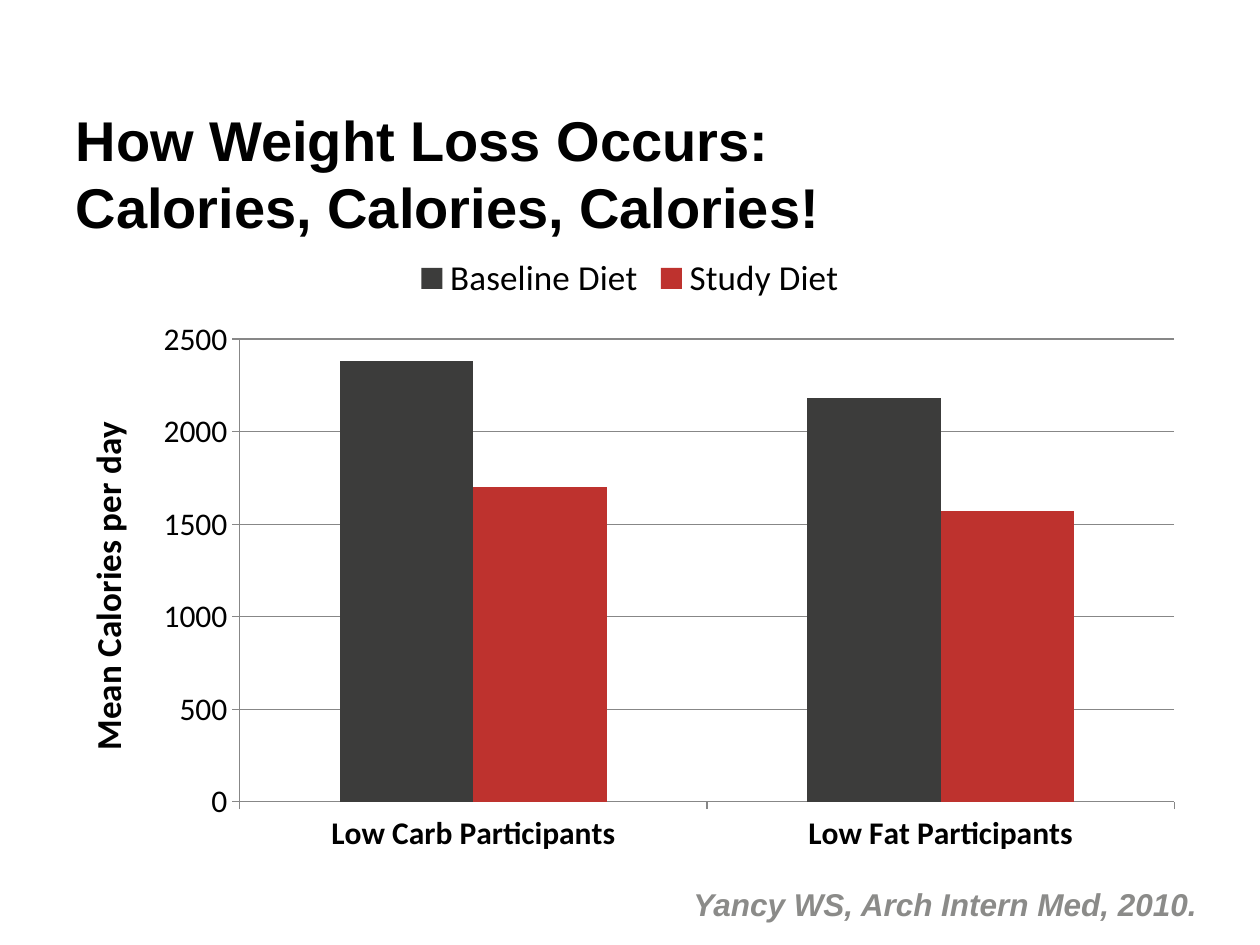
import dataclasses
import typing

import lxml.etree
import pptx
import pptx.chart.data
import pptx.dml.color
import pptx.enum.chart
import pptx.enum.text
import pptx.oxml
import pptx.oxml.ns
import pptx.util

Inches = pptx.util.Inches
Pt = pptx.util.Pt
COLORS = {
    "text": "000000",
    "baseline": "3C3C3B",
    "study": "BE322E",
    "line": "878787",
    "citation": "8B8B89",
}


@dataclasses.dataclass
class Series:
    name: str
    values: tuple[int, ...]
    color: str


CATEGORIES = ("Low Carb Participants", "Low Fat Participants")
SERIES = (
    Series("Baseline Diet", (2380, 2180), "baseline"),
    Series("Study Diet", (1700, 1570), "study"),
)
PLOT_LAYOUT = {"x": 0.156, "y": 0.158, "w": 0.824, "h": 0.742}


def rgb(color: str) -> pptx.dml.color.RGBColor:
    return pptx.dml.color.RGBColor.from_string(COLORS[color])


def set_attrs(obj: typing.Any, **values: typing.Any) -> None:
    for name, value in values.items():
        setattr(obj, name, value)


def set_font(font: typing.Any, size: int, color: str = "text", **values: typing.Any) -> None:
    set_attrs(font, size=Pt(size), **values)
    font.color.rgb = rgb(color)


def place(sp: typing.Any, left: float, top: float, width: float, height: float) -> None:
    set_attrs(sp, left=Inches(left), top=Inches(top),
              width=Inches(width), height=Inches(height))


def set_plot_layout(chart: typing.Any) -> None:
    plot_area = chart._chartSpace.chart.plotArea
    for old in plot_area.findall(pptx.oxml.ns.qn("c:layout")):
        plot_area.remove(old)
    layout = lxml.etree.Element(pptx.oxml.ns.qn("c:layout"))
    manual = lxml.etree.SubElement(layout, pptx.oxml.ns.qn("c:manualLayout"))
    settings = {"layoutTarget": "inner", "xMode": "edge", "yMode": "edge", **PLOT_LAYOUT}
    for tag, value in settings.items():
        lxml.etree.SubElement(manual, pptx.oxml.ns.qn(f"c:{tag}")).set("val", str(value))
    plot_area.insert(0, layout)


def add_title(slide: typing.Any) -> None:
    sp = slide.shapes.title
    place(sp, 0.5, 0.76, 9, 1.22)
    tf = sp.text_frame
    set_attrs(tf, word_wrap=True, vertical_anchor=pptx.enum.text.MSO_ANCHOR.MIDDLE)
    p = tf.paragraphs[0]
    p.text = "How Weight Loss Occurs:\vCalories, Calories, Calories!"
    p.alignment = pptx.enum.text.PP_ALIGN.LEFT
    for r in p.runs:
        set_font(r.font, 32, name="Arial", bold=True)


def add_calorie_chart(slide: typing.Any) -> None:
    data = pptx.chart.data.CategoryChartData()
    data.categories = CATEGORIES
    for s in SERIES:
        data.add_series(s.name, s.values)
    chart = slide.shapes.add_chart(
        pptx.enum.chart.XL_CHART_TYPE.COLUMN_CLUSTERED,
        Inches(0.5), Inches(1.91), Inches(9), Inches(4.95), data).chart
    set_attrs(chart, has_title=False, has_legend=True)
    set_font(chart.font, 18, name="Calibri")
    set_attrs(chart.legend, include_in_layout=False,
              position=pptx.enum.chart.XL_LEGEND_POSITION.TOP)
    set_font(chart.legend.font, 20, name="Calibri")

    plot = chart.plots[0]
    set_attrs(plot, gap_width=150, overlap=0, vary_by_categories=False)
    for s, bars in zip(SERIES, plot.series):
        bars.format.fill.solid()
        bars.format.fill.fore_color.rgb = rgb(s.color)

    cat, val = chart.category_axis, chart.value_axis
    set_font(cat.tick_labels.font, 18, name="Calibri", bold=True)
    set_attrs(val, minimum_scale=0, maximum_scale=2500, major_unit=500,
              has_major_gridlines=True)
    for item in (cat, val, val.major_gridlines):
        item.format.line.color.rgb = rgb("line")
        item.format.line.width = Pt(0.75)
    for axis in (cat, val):
        axis.major_tick_mark = pptx.enum.chart.XL_TICK_MARK.OUTSIDE
    p = val.axis_title.text_frame.paragraphs[0]
    r = p.add_run()
    r.text = "Mean Calories per day"
    set_font(r.font, 20, name="Calibri", bold=True)
    set_plot_layout(chart)


def add_citation(slide: typing.Any) -> None:
    sp = slide.shapes.add_textbox(Inches(4.91), Inches(7.06), Inches(4.59), Inches(0.27))
    tf = sp.text_frame
    set_attrs(tf, word_wrap=True, vertical_anchor=pptx.enum.text.MSO_ANCHOR.BOTTOM,
              auto_size=pptx.enum.text.MSO_AUTO_SIZE.SHAPE_TO_FIT_TEXT,
              margin_left=0, margin_top=0, margin_right=0, margin_bottom=0)
    p = tf.paragraphs[0]
    set_attrs(p, alignment=pptx.enum.text.PP_ALIGN.RIGHT, line_spacing=0.9)
    r = p.add_run()
    r.text = "Yancy WS, Arch Intern Med, 2010."
    set_font(r.font, 18, "citation", name="Arial", bold=True, italic=True)


def main() -> None:
    prs = pptx.Presentation()
    set_attrs(prs, slide_width=Inches(10), slide_height=Inches(7.5))
    slide = prs.slides.add_slide(prs.slide_layouts[5])
    add_title(slide)
    add_calorie_chart(slide)
    add_citation(slide)
    prs.save("out.pptx")


if __name__ == "__main__":
    main()
